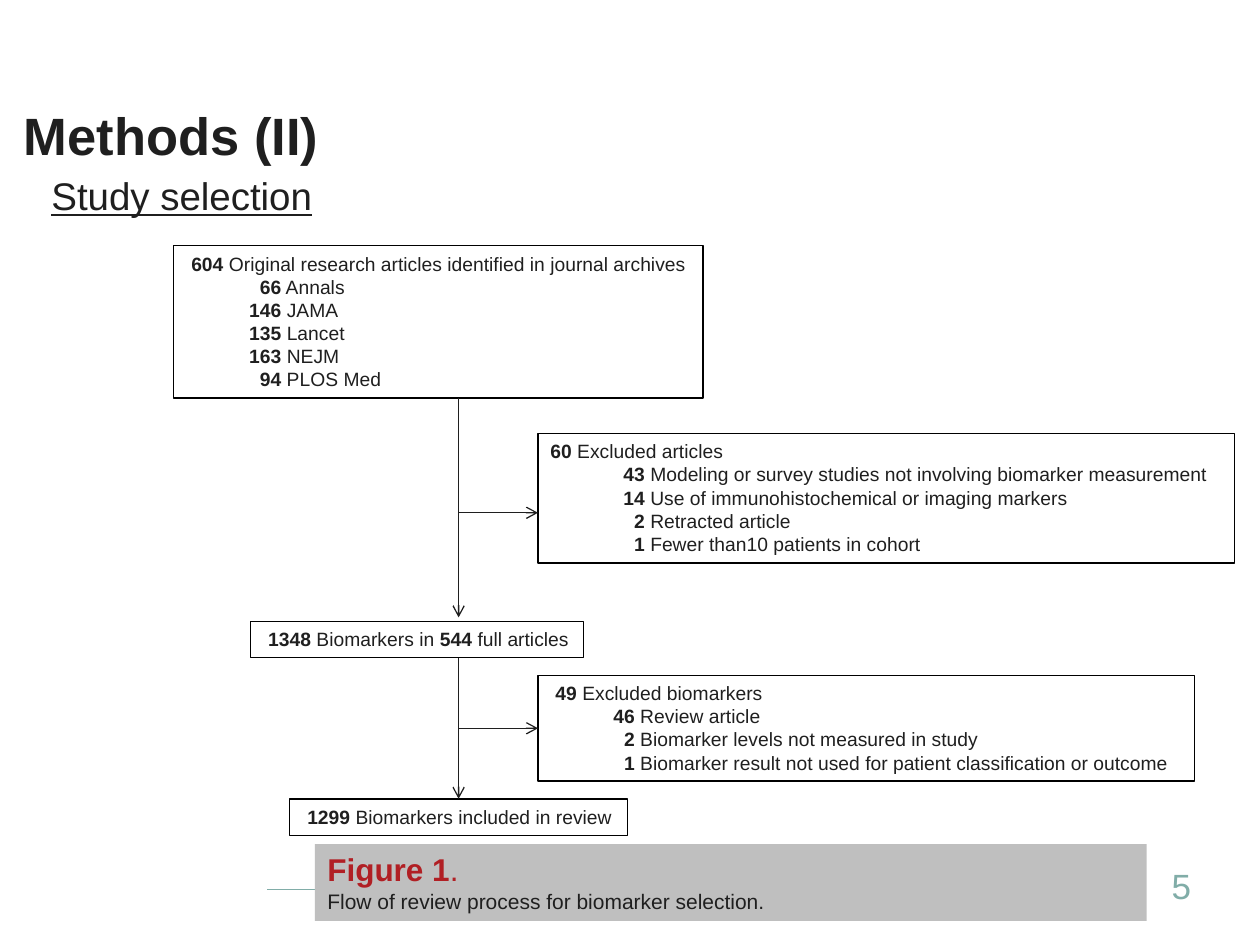
from lxml import etree
from pptx import Presentation
from pptx.dml.color import RGBColor
from pptx.enum.shapes import MSO_CONNECTOR, MSO_SHAPE
from pptx.enum.text import MSO_ANCHOR, PP_ALIGN
from pptx.oxml.ns import qn
from pptx.util import Inches, Pt

INK, BLACK, TEAL, RED, GRAY = "1F1F1F", "000000", "81ADA8", "B11F24", "BFBFBF"
FONT = "Arial"
STEM = 3.64      # x of the downward flow
BRANCH = 4.27    # left edge of the exclusion boxes
DIGIT = 0.085    # width of one digit, used to right-align the counts

# Flow boxes: position, header runs (text, bold), header and item indents, counts
BOXES = {
    "identified": dict(
        at=(1.38, 1.95, 4.2, 1.21), indent=(0.04, 0.5),
        head=[("604", True), (" Original research articles identified in journal archives", False)],
        items=[("66", "Annals"), ("146", "JAMA"), ("135", "Lancet"),
               ("163", "NEJM"), ("94", "PLOS Med")]),
    "excluded articles": dict(
        at=(BRANCH, 3.44, 5.53, 1.03), indent=(0, 0.58),
        head=[("60", True), (" Excluded articles", False)],
        items=[("43", "Modeling or survey studies not involving biomarker measurement"),
               ("14", "Use of immunohistochemical or imaging markers"),
               ("2", "Retracted article"),
               ("1", "Fewer than10 patients in cohort")]),
    "full articles": dict(
        at=(1.99, 4.93, 2.64, 0.29), indent=(0.04, 0),
        head=[("1348", True), (" Biomarkers in ", False), ("544", True), (" full articles", False)],
        items=[]),
    "excluded biomarkers": dict(
        at=(BRANCH, 5.36, 5.21, 0.84), indent=(0.04, 0.5),
        head=[("49", True), (" Excluded biomarkers", False)],
        items=[("46", "Review article"),
               ("2", "Biomarker levels not measured in study"),
               ("1", "Biomarker result not used for patient classification or outcome")]),
    "included": dict(
        at=(2.3, 6.34, 2.68, 0.29), indent=(0.04, 0),
        head=[("1299", True), (" Biomarkers included in review", False)],
        items=[]),
}
CAPTION = [[("Figure 1", True), (".", False)],
           [("Flow of review process for biomarker selection.", False)]]


def rgb(value):
    return RGBColor.from_string(value)


def place(sp, at):
    sp.left, sp.top, sp.width, sp.height = map(Inches, at)


def write(p, runs, size, color, indent=0):
    p.alignment = PP_ALIGN.LEFT
    if indent:
        p._p.get_or_add_pPr().set("marL", str(Inches(indent)))
    for text, bold in runs:
        r = p.add_run()
        r.text = text
        r.font.name, r.font.size, r.font.bold = FONT, Pt(size), bold
        r.font.color.rgb = rgb(color)
    return p


def next_paragraph(tf, first):
    return tf.paragraphs[0] if first else tf.add_paragraph()


def add_box(shapes, at, fill=None, line=None):
    sp = shapes.add_shape(MSO_SHAPE.RECTANGLE, *map(Inches, at))
    sp.shadow.inherit = False
    if fill:
        sp.fill.solid()
        sp.fill.fore_color.rgb = rgb(fill)
    else:
        sp.fill.background()
    if line:
        sp.line.color.rgb = rgb(line)
        sp.line.width = Pt(0.75)
    else:
        sp.line.fill.background()
    tf = sp.text_frame
    tf.word_wrap, tf.vertical_anchor, tf.margin_right = True, MSO_ANCHOR.TOP, 0
    return sp


def add_flow_box(shapes, at, indent, head, items):
    sp = add_box(shapes, at, line=BLACK)
    tf = sp.text_frame
    write(tf.paragraphs[0], head, 11, INK, indent[0])
    digits = max((len(count) for count, _ in items), default=0)
    for count, label in items:
        left = indent[1] + (digits - len(count)) * DIGIT
        write(tf.add_paragraph(), [(count, True), (" " + label, False)], 11, INK, left)
    return sp


def add_line(shapes, start, end, color=INK, width=0.75, arrow=True):
    cx = shapes.add_connector(MSO_CONNECTOR.STRAIGHT, *map(Inches, start + end))
    cx.line.color.rgb = rgb(color)
    cx.line.width = Pt(width)
    if arrow:
        etree.SubElement(cx.line._get_or_add_ln(), qn("a:tailEnd"), type="arrow")
    etree.SubElement(cx._element.spPr, qn("a:effectLst"))
    return cx


def main():
    prs = Presentation()
    prs.slide_width, prs.slide_height = Inches(10), Inches(7.5)
    s = prs.slides.add_slide(prs.slide_layouts[5])
    shapes = s.shapes

    # Footer rule
    add_line(shapes, (2.12, 7.06), (8.73, 7.06), TEAL, 0.5, arrow=False)

    # Title
    title = shapes.title
    place(title, (0.09, 0.72, 7.93, 0.82))
    tf = title.text_frame
    tf.vertical_anchor, tf.margin_top = MSO_ANCHOR.TOP, Inches(0.1)
    write(tf.paragraphs[0], [("Methods (II)", True)], 30, INK)

    # Subtitle and page number
    tf = shapes.add_textbox(*map(Inches, (0.31, 1.32, 8.89, 0.5))).text_frame
    tf.word_wrap = True
    p = write(tf.paragraphs[0], [("Study selection", False)], 22, INK)
    p.runs[0].font.underline = True
    tf = shapes.add_textbox(*map(Inches, (9.2, 6.83, 0.8, 0.4))).text_frame
    tf.word_wrap, tf.vertical_anchor = True, MSO_ANCHOR.MIDDLE
    write(tf.paragraphs[0], [("5", False)], 20, TEAL)

    # Flow boxes
    boxes = {name: add_flow_box(shapes, **box) for name, box in BOXES.items()}

    # Downward flow
    add_line(shapes, (STEM, 3.16), (STEM, 4.9))
    down = add_line(shapes, (STEM, 5.22), (STEM, 6.34))
    down.end_connect(boxes["included"], 0)

    # Branches to the exclusions
    add_line(shapes, (STEM, 4.07), (BRANCH, 4.07))
    branch = add_line(shapes, (STEM, 5.78), (BRANCH, 5.78))
    branch.end_connect(boxes["excluded biomarkers"], 1)

    # Caption
    tf = add_box(shapes, (2.5, 6.7, 6.6, 0.61), fill=GRAY).text_frame
    for i, (runs, size, color) in enumerate(zip(CAPTION, (18, 12), (RED, INK))):
        write(next_paragraph(tf, i == 0), runs, size, color)

    prs.save("out.pptx")


if __name__ == "__main__":
    main()
